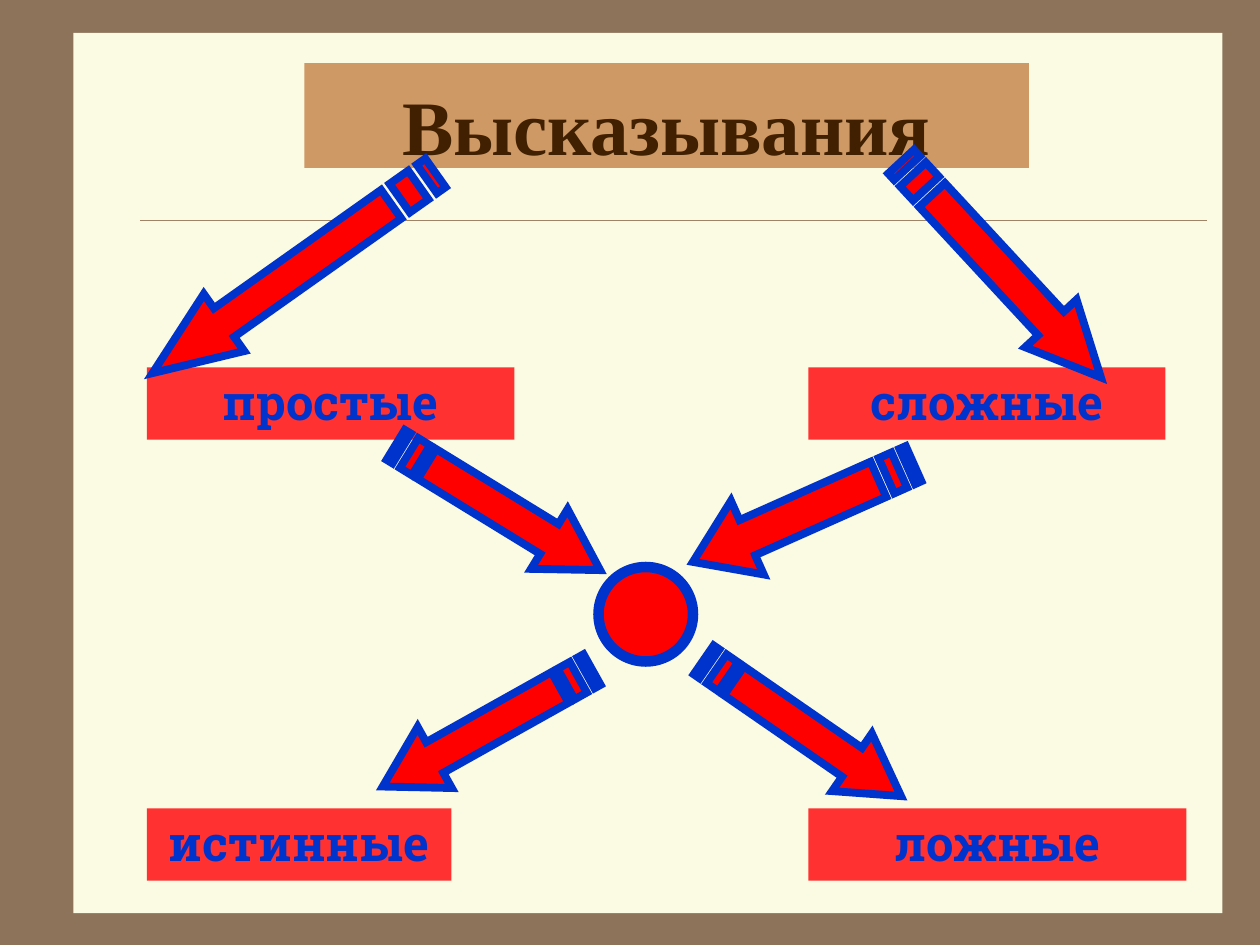
from lxml.etree import SubElement
from pptx import Presentation
from pptx.dml.color import RGBColor
from pptx.enum.shapes import MSO_CONNECTOR, MSO_SHAPE as Shape
from pptx.enum.text import MSO_ANCHOR as Anchor, PP_ALIGN as Align
from pptx.oxml.ns import qn
from pptx.util import Pt

BROWN = RGBColor(0x8C, 0x73, 0x5A)
CREAM = RGBColor(0xFB, 0xFA, 0xE2)
RULE = RGBColor(0xA0, 0x83, 0x66)
TAN = RGBColor(0xCE, 0x99, 0x64)
DARK = RGBColor(0x40, 0x20, 0x00)
CORAL = RGBColor(0xFF, 0x31, 0x31)
RED = RGBColor(0xFF, 0x00, 0x00)
BLUE = RGBColor(0x00, 0x33, 0xCC)

TITLE = ("Высказывания", 174, 36, 414, 60)
LABELS = [
    ("простые", 84, 210, 210),
    ("сложные", 462, 210, 204),
    ("истинные", 84, 462, 174),
    ("ложные", 462, 462, 216),
]
LABEL_HEIGHT = 41.2
ARROWS = [
    (69, 136, 197.5, 39.6, 144.7),
    (390, 396, 137, 39.6, 34.6),
    (390, 270, 138, 46, 156),
    (210, 396, 137, 39.6, 150.8),
    (488, 134, 168, 39.6, 47.2),
    (216, 270, 137, 39.6, 31.5),
]

prs = Presentation()
prs.slide_width, prs.slide_height = Pt(720), Pt(540)
s = prs.slides.add_slide(prs.slide_layouts[6])
s.background.fill.solid()
s.background.fill.fore_color.rgb = BROWN


def paint(sp, fill, line=None, width=0):
    sp.shadow.inherit = False
    sp.fill.solid()
    sp.fill.fore_color.rgb = fill
    if line is None:
        sp.line.fill.background()
    else:
        sp.line.color.rgb = line
        sp.line.width = Pt(width)


def add_shape(kind, x, y, w, h, fill, line=None, width=0):
    sp = s.shapes.add_shape(kind, Pt(x), Pt(y), Pt(w), Pt(h))
    paint(sp, fill, line, width)
    return sp


def add_text(sp, text, font, size, color, top):
    tf = sp.text_frame
    tf.word_wrap = True
    tf.vertical_anchor = Anchor.TOP
    tf.margin_top, tf.margin_bottom = Pt(top), 0
    p = tf.paragraphs[0]
    p.alignment = Align.CENTER
    r = p.add_run()
    r.text = text
    r.font.name, r.font.size, r.font.bold = font, Pt(size), True
    r.font.color.rgb = color


def add_striped_arrow(x, y, w, h, angle):
    def bar(left, right):
        return [(left, h / 4), (right, h / 4), (right, h * 3 / 4), (left, h * 3 / 4)]

    neck = w * 3 / 4
    start = w * 5 / 32
    body = [(start, h / 4), (neck, h / 4), (neck, 0), (w, h / 2),
            (neck, h), (neck, h * 3 / 4), (start, h * 3 / 4)]
    outlines = [body, bar(w / 16, w / 8), bar(0, w / 32)]
    fb = s.shapes.build_freeform(*body[0], scale=Pt(1))
    for i, points in enumerate(outlines):
        if i:
            fb.move_to(*points[0])
        fb.add_line_segments(points[1:], close=True)
    sp = fb.convert_to_shape()
    sp.left, sp.top = Pt(x), Pt(y)
    sp.rotation = angle
    paint(sp, RED, BLUE, 4.5)
    ln = sp.element.spPr.find(qn("a:ln"))
    SubElement(ln, qn("a:miter")).set("lim", "800000")


add_shape(Shape.RECTANGLE, 42, 18.8, 656.5, 503, CREAM)

rule = s.shapes.add_connector(MSO_CONNECTOR.STRAIGHT, Pt(80), Pt(126), Pt(690), Pt(126))
rule.line.color.rgb = RULE
rule.line.width = Pt(0.25)
SubElement(rule.element.spPr, qn("a:effectLst"))

text, *box = TITLE
add_text(add_shape(Shape.RECTANGLE, *box, TAN), text, "Times New Roman", 44, DARK, 9)

for text, x, y, w in LABELS:
    sp = add_shape(Shape.RECTANGLE, x, y, w, LABEL_HEIGHT, CORAL)
    add_text(sp, text, "Roboto Slab", 28, BLUE, 2)

add_shape(Shape.OVAL, 342, 324, 54, 54, RED, BLUE, 6)

for arrow in ARROWS:
    add_striped_arrow(*arrow)

prs.save("out.pptx")
